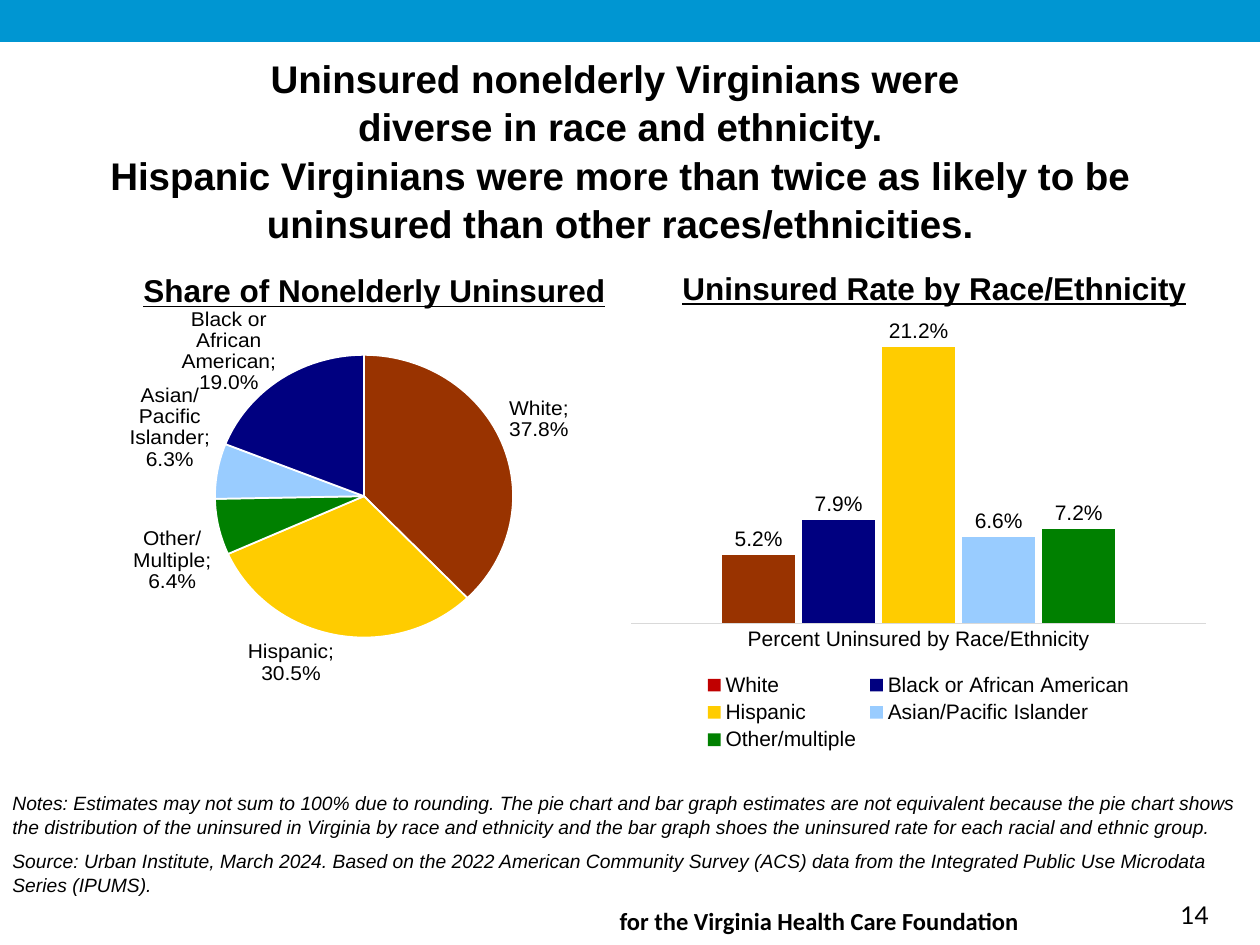
from lxml import etree
from pptx import Presentation
from pptx.chart.data import CategoryChartData as Data
from pptx.dml.color import RGBColor
from pptx.enum.chart import XL_CHART_TYPE as Kind, XL_LABEL_POSITION as Pos
from pptx.enum.chart import XL_LEGEND_POSITION as Side, XL_TICK_LABEL_POSITION as Tick
from pptx.enum.chart import XL_TICK_MARK as Mark
from pptx.enum.text import PP_ALIGN as Align
from pptx.oxml import parse_xml
from pptx.util import Pt


def color(code):
    return RGBColor.from_string(code)


def style(font, size, name="Arial", bold=False):
    font.size, font.name, font.bold = Pt(size), name, bold
    font.color.rgb = color("000000")


prs = Presentation()
prs.slide_width, prs.slide_height = Pt(720), Pt(540)
slide = prs.slides.add_slide(prs.slide_layouts[6])
shapes = slide.shapes

band = shapes.add_shape(1, 0, 0, Pt(720), Pt(24))
band.shadow.inherit = False
band.fill.solid()
band.fill.fore_color.rgb = color("0096D2")
band.line.fill.background()

brown, gold, green, sky, navy = "993300", "FFCC00", "008000", "99CCFF", "000080"

data = Data(number_format="0.0%")
data.categories = ["White", "Hispanic", "Other/Multiple",
                   "Asian/Pacific Islander", "Black or African American"]
data.add_series("Series 1", [0.378, 0.305, 0.064, 0.063, 0.19])
pie = shapes.add_chart(Kind.PIE, Pt(26), Pt(165), Pt(334), Pt(226), data).chart
pie.has_title = pie.has_legend = False
style(pie.font, 18.1, "Calibri", True)
plot = pie.plots[0]
plot.vary_by_categories = True
share = plot.series[0]
for i, code in enumerate([brown, gold, green, sky, navy]):
    form = share.points[i].format
    form.fill.solid()
    form.fill.fore_color.rgb = color(code)
    form.line.color.rgb = color("FFFFFF")
    form.line.width = Pt(1)
tags = share.data_labels
style(tags.font, 12)
tags.number_format, tags.number_format_is_linked = "0.0%", False
tags.position = Pos.OUTSIDE_END
tags.show_value = tags.show_category_name = True
tags.show_percentage = False

space = "http://schemas.openxmlformats.org/drawingml/2006/chart"
area = plot._element.getparent()
for old in area.findall(f"{{{space}}}layout"):
    area.remove(old)
box = parse_xml(f'<c:layout xmlns:c="{space}"><c:manualLayout/></c:layout>')
for tag, val in [("layoutTarget", "inner"), ("xMode", "edge"), ("yMode", "edge"),
                 ("x", "0.29"), ("y", "0.1"), ("w", "0.51"), ("h", "0.8")]:
    etree.SubElement(box[0], f"{{{space}}}{tag}").set("val", val)
area.insert(0, box)

rates = [("White", 0.052, "C00000"), ("Black or African American", 0.079, navy),
         ("Hispanic", 0.212, gold), ("Asian/Pacific Islander", 0.066, sky),
         ("Other/multiple", 0.072, green)]
data = Data(number_format="0.0%")
data.categories = ["Percent Uninsured by Race/Ethnicity"]
for name, rate, code in rates:
    data.add_series(name, [rate])
bars = shapes.add_chart(Kind.COLUMN_CLUSTERED, Pt(354), Pt(165), Pt(342), Pt(267), data).chart
bars.has_title = False
style(bars.font, 10)
bars.has_legend = True
bars.legend.position = Side.BOTTOM
bars.legend.include_in_layout = False
style(bars.legend.font, 12)
bars.value_axis.visible = False
bars.value_axis.has_major_gridlines = False
axis = bars.category_axis
axis.major_tick_mark = axis.minor_tick_mark = Mark.NONE
axis.tick_label_position = Tick.NEXT_TO_AXIS
style(axis.tick_labels.font, 12)
axis.format.line.color.rgb = color("D9D9D9")
axis.format.line.width = Pt(0.75)
plot = bars.plots[0]
plot.vary_by_categories = False
plot.gap_width, plot.overlap = 250, -10
for group, (name, rate, code) in zip(plot.series, rates):
    group.format.fill.solid()
    group.format.fill.fore_color.rgb = color(code)
    tags = group.data_labels
    style(tags.font, 12)
    tags.number_format, tags.number_format_is_linked = "0.0%", False
    tags.position, tags.show_value = Pos.OUTSIDE_END, True
fill = plot.series[0].points[0].format.fill
fill.solid()
fill.fore_color.rgb = color(brown)

title = ("Uninsured nonelderly Virginians were \vdiverse in race and ethnicity.\v"
         "Hispanic Virginians were more than twice as likely to be "
         "uninsured than other races/ethnicities.")
notes = ("Notes: Estimates may not sum to 100% due to rounding. The pie chart and bar graph "
         "estimates are not equivalent because the pie chart shows the distribution of the "
         "uninsured in Virginia by race and ethnicity and the bar graph shoes the uninsured "
         "rate for each racial and ethnic group.\n"
         "Source: Urban Institute, March 2024. Based on the 2022 American Community Survey "
         "(ACS) data from the Integrated Public Use Microdata Series (IPUMS).")
mid, left = Align.CENTER, Align.LEFT
texts = [
    (title, 13, 26.6, 683, 114, 22, "Arial", "b", mid, 1.05),
    (notes, 0, 448, 720, 67, 11, "Arial", "i", left, 1.05),
    ("for the Virginia Health Care Foundation", 347, 514, 349, 19, 14, "Calibri", "b", left, 1),
    ("Share of Nonelderly Uninsured", 34, 150.5, 360, 29, 18, "Arial", "bu", mid, 1.05),
    ("Uninsured Rate by Race/Ethnicity", 354, 149, 360, 29, 18, "Arial", "bu", mid, 1.05),
    ("14", 667.5, 511, 52.5, 24.5, 14, "Lato", "", left, 1),
]
for words, x, y, w, h, size, face, look, align, gap in texts:
    frame = shapes.add_textbox(Pt(x), Pt(y), Pt(w), Pt(h)).text_frame
    frame.word_wrap = True
    frame.text = words
    for n, para in enumerate(frame.paragraphs):
        para.alignment, para.line_spacing = align, gap
        if n:
            para.space_before = Pt(5.5)
        for run in para.runs:
            style(run.font, size, face, "b" in look)
            run.font.italic, run.font.underline = "i" in look, "u" in look

prs.save("out.pptx")
